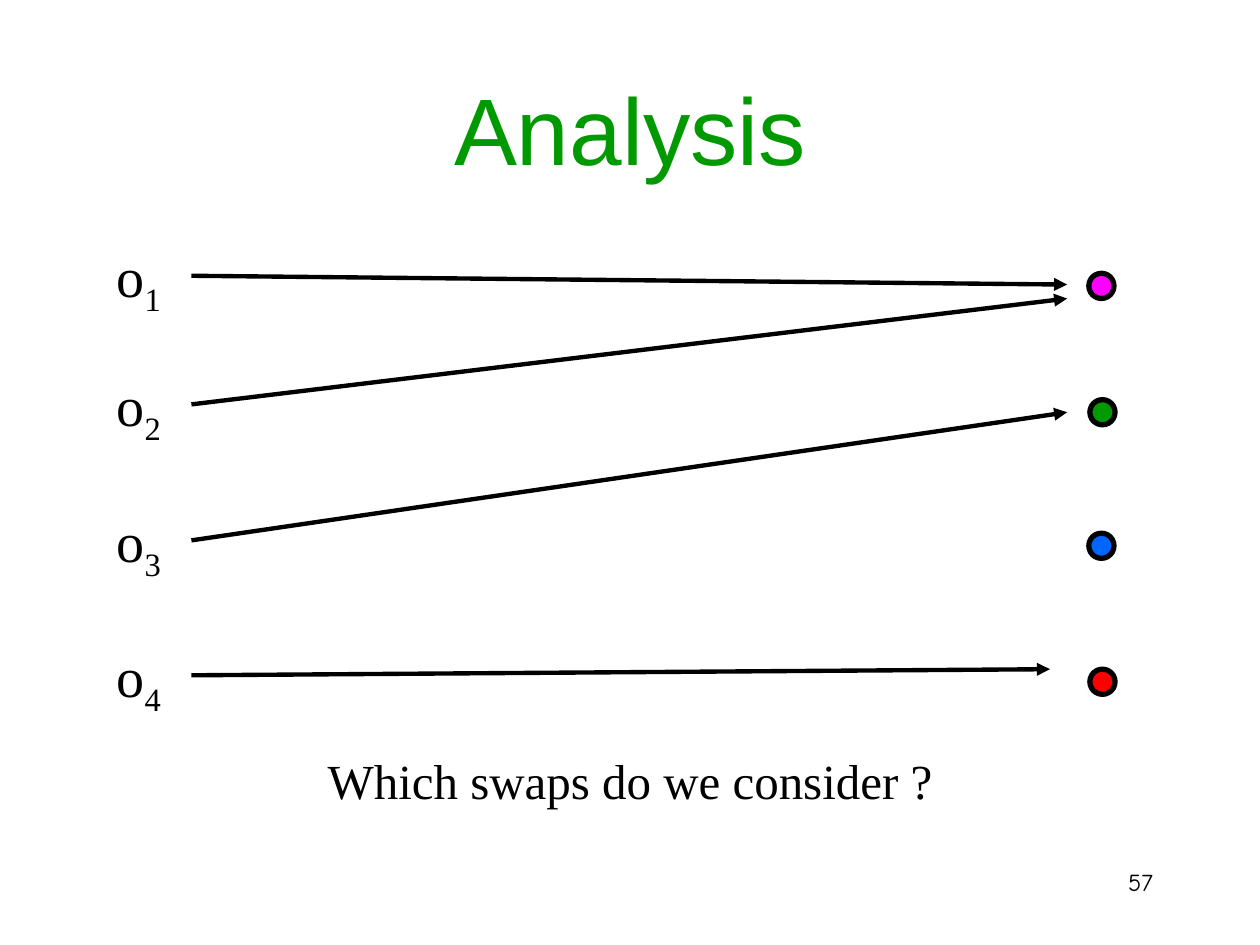
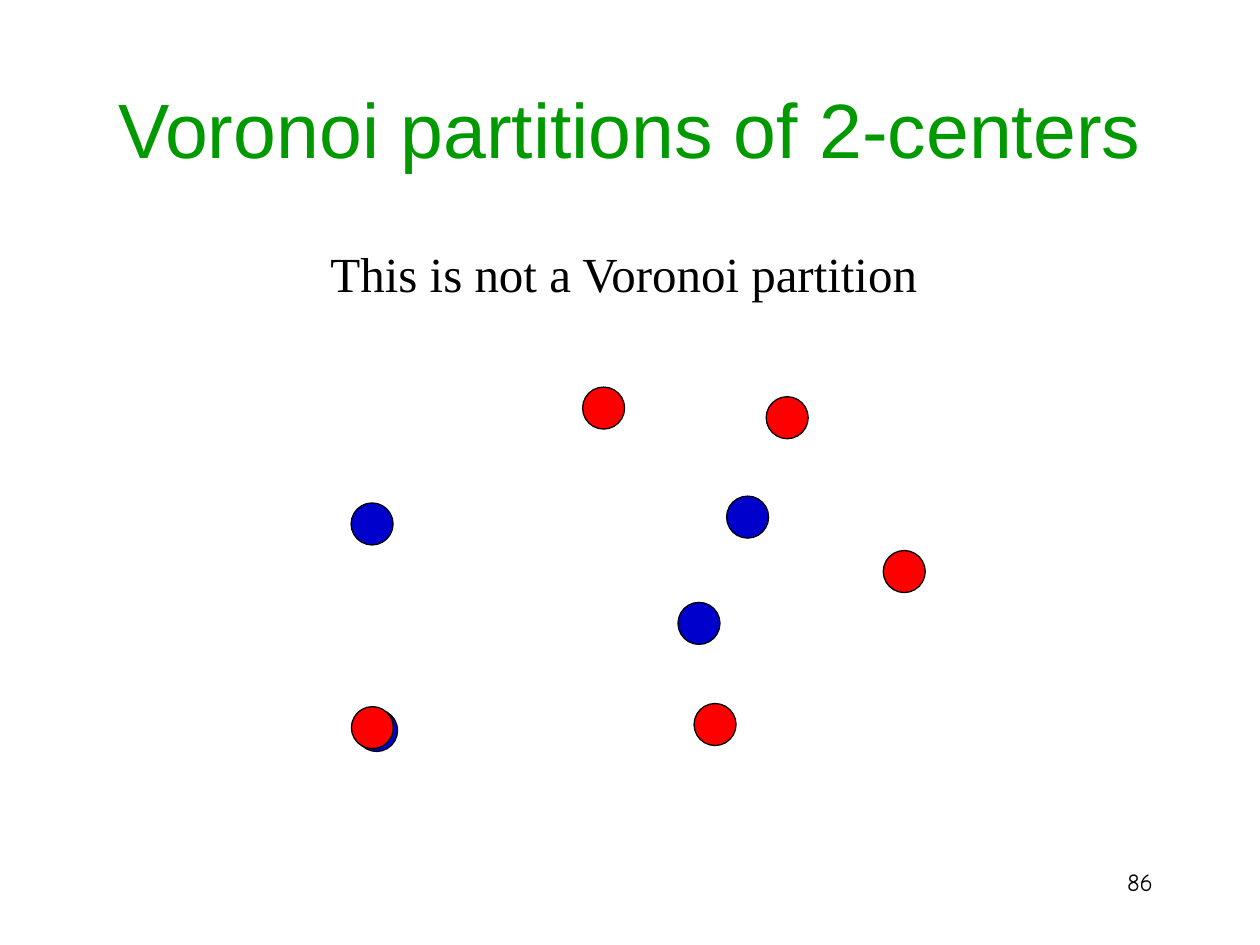
import pptx
import pptx.dml.color
import pptx.enum.shapes
import pptx.enum.text
import pptx.oxml
import pptx.oxml.ns
import pptx.util

Pt = pptx.util.Pt
ALIGN = pptx.enum.text.PP_ALIGN
ANCHOR = pptx.enum.text.MSO_ANCHOR
BLACK, GREEN, RED, NAVY = "000000", "009900", "FF0000", "0000CC"
SERIF, SANS, COMIC = "Times New Roman", "Arial", "Comic Neue"


def rgb(value):
    return pptx.dml.color.RGBColor.from_string(value)


def write(tf, text, size=28, font=SERIF, color=BLACK, align=ALIGN.CENTER,
          anchor=ANCHOR.TOP, sub=""):
    tf.word_wrap = True
    tf.auto_size = pptx.enum.text.MSO_AUTO_SIZE.NONE
    tf.vertical_anchor = anchor
    p = tf.paragraphs[0]
    p.alignment = align
    for part in filter(None, (text, sub)):
        r = p.add_run()
        r.text = part
        r.font.size = Pt(size)
        r.font.name = font
        r.font.color.rgb = rgb(color)
    if sub:
        r.font._element.set("baseline", "-25000")


class Deck:
    def __init__(self):
        self.prs = pptx.Presentation()
        self.prs.slide_width, self.prs.slide_height = Pt(720), Pt(540)
        self.s = None

    def slide(self, title, size, number):
        self.s = self.prs.slides.add_slide(self.prs.slide_layouts[5])
        self.s.background.fill.solid()
        self.s.background.fill.fore_color.rgb = rgb("FFFFFF")
        sp = self.s.shapes.title
        sp.left, sp.top, sp.width, sp.height = Pt(54), Pt(28), Pt(612), Pt(90)
        write(sp.text_frame, title, size=size, font=SANS, color=GREEN,
              anchor=ANCHOR.MIDDLE)
        self.text(number, 516, 492, 150, 36, size=14, font=COMIC,
                  align=ALIGN.RIGHT)

    def text(self, text, x, y, w, h, **style):
        sp = self.s.shapes.add_textbox(Pt(x), Pt(y), Pt(w), Pt(h))
        write(sp.text_frame, text, **style)
        return sp

    def caption(self, text, y):
        self.text(text, 0, y, 720, 41)

    def dot(self, x, y, size, fill, line):
        sp = self.s.shapes.add_shape(pptx.enum.shapes.MSO_SHAPE.OVAL,
                                     Pt(x), Pt(y), Pt(size), Pt(size))
        sp.shadow.inherit = False
        sp.fill.solid()
        sp.fill.fore_color.rgb = rgb(fill)
        sp.line.color.rgb = rgb(BLACK)
        sp.line.width = Pt(line)

    def arrow(self, source, x, y):
        sp = self.s.shapes.add_connector(
            pptx.enum.shapes.MSO_CONNECTOR.STRAIGHT, 0, 0, Pt(x), Pt(y))
        sp.begin_connect(source, 3)
        sp.line.color.rgb = rgb(BLACK)
        sp.line.width = Pt(2.5)
        ln = sp.line._get_or_add_ln()
        ln.append(pptx.oxml.parse_xml(
            f'<a:tailEnd {pptx.oxml.ns.nsdecls("a")} type="triangle"/>'))
        sp._element.spPr.append(pptx.oxml.parse_xml(
            f'<a:effectLst {pptx.oxml.ns.nsdecls("a")}/>'))


def analysis(deck):
    deck.slide("Analysis", 54, "57")
    centers = [(622.2, 156.2, "FF00FF"), (622.8, 228.4, GREEN),
               (622.2, 304.7, "0066FF"), (622.8, 382.4, RED)]
    for x, y, fill in centers:
        deck.dot(x, y, 14.4, fill, 3)
    label_tops = [134.6, 208.1, 285.8, 362.9]
    labels = [deck.text("o", 49, y, 60.4, 46, size=32, sub=str(i))
              for i, y in enumerate(label_tops, 1)]
    deck.caption("Which swaps do we consider ?", 425.5)
    arrow_tips = [(609.8, 162.6), (609.8, 170.6), (609.8, 235.6), (600, 382.4)]
    for label, tip in zip(labels, arrow_tips):
        deck.arrow(label, *tip)


def voronoi(deck):
    deck.slide("Voronoi partitions of 2-centers", 44, "86")
    deck.caption("This is not a Voronoi partition ", 135.4)
    points = {
        NAVY: [(203.2, 405.4), (387.4, 344.2), (200.6, 287.4), (415.2, 283.5)],
        RED: [(332.9, 221.2), (396.6, 402), (200.8, 403.8), (437.8, 226.7),
              (504.7, 314.6)],
    }
    for fill, spots in points.items():
        for x, y in spots:
            deck.dot(x, y, 24, fill, 0.75)


def main():
    deck = Deck()
    analysis(deck)
    voronoi(deck)
    deck.prs.save("out.pptx")


if __name__ == "__main__":
    main()
